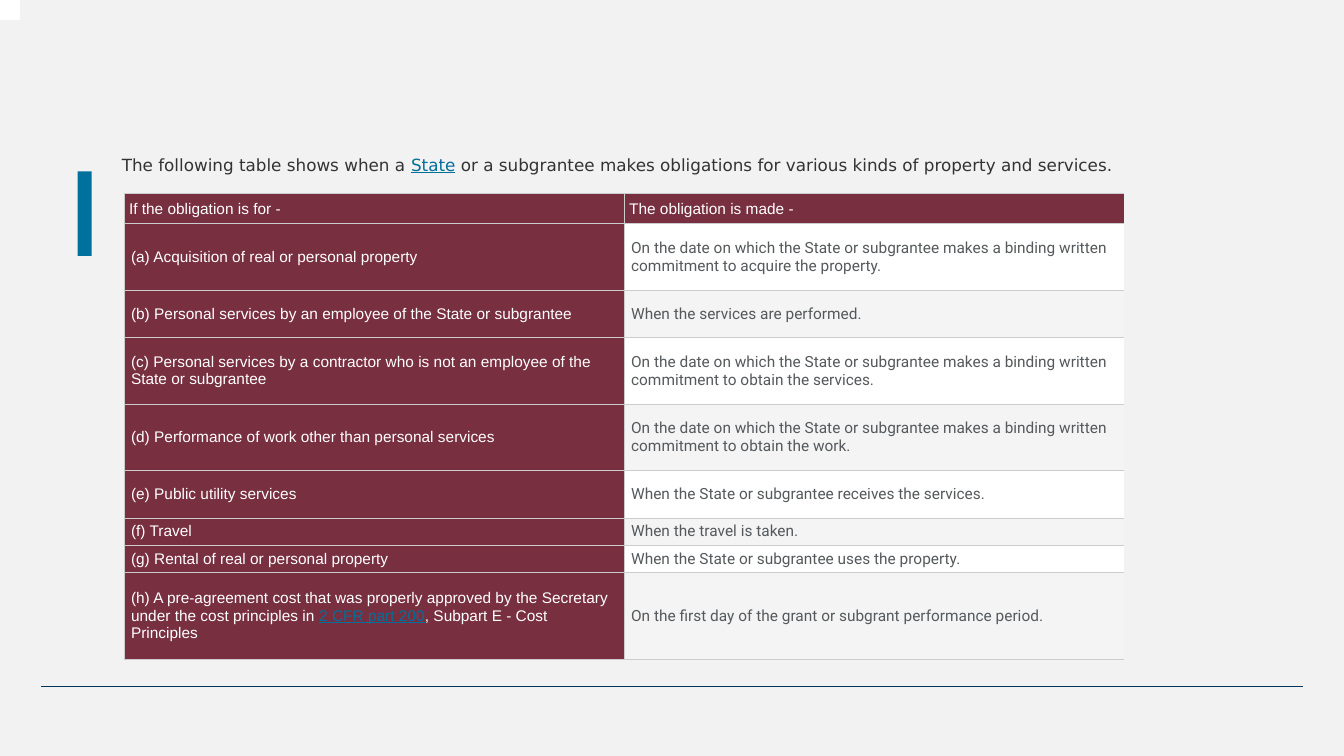
from dataclasses import dataclass

from lxml.etree import SubElement
from pptx import Presentation
from pptx.dml.color import RGBColor
from pptx.enum.shapes import MSO_CONNECTOR, MSO_SHAPE
from pptx.enum.text import MSO_ANCHOR
from pptx.oxml.ns import qn
from pptx.util import Inches, Pt


@dataclass(frozen=True)
class Theme:
    background: str = "F2F2F2"
    white: str = "FFFFFF"
    stripe: str = "F4F4F4"
    garnet: str = "782F40"
    accent: str = "00719C"
    link: str = "00709B"
    rule: str = "00365A"
    border: str = "CCCCCC"
    title_text: str = "333333"
    body_text: str = "55595C"
    title_font: str = "DejaVu Sans"
    label_font: str = "Arial"
    body_font: str = "Roboto"
    title_size: float = 12
    table_size: float = 11
    border_width: float = 0.75


HEADER = ("If the obligation is for -", "The obligation is made -")
OBLIGATIONS = [
    ("(a) Acquisition of real or personal property",
     "On the date on which the State or subgrantee makes a binding written "
     "commitment to acquire the property."),
    ("(b) Personal services by an employee of the State or subgrantee",
     "When the services are performed."),
    ("(c) Personal services by a contractor who is not an employee of the State or subgrantee",
     "On the date on which the State or subgrantee makes a binding written "
     "commitment to obtain the services."),
    ("(d) Performance of work other than personal services",
     "On the date on which the State or subgrantee makes a binding written "
     "commitment to obtain the work."),
    ("(e) Public utility services",
     "When the State or subgrantee receives the services."),
    ("(f) Travel", "When the travel is taken."),
    ("(g) Rental of real or personal property",
     "When the State or subgrantee uses the property."),
    (("(h) A pre-agreement cost that was properly approved by the Secretary "
      "under the cost principles in ", "2 CFR part 200", ", Subpart E - Cost Principles"),
     "On the first day of the grant or subgrant performance period."),
]
ROW_HEIGHTS = [0.3, 0.66, 0.47, 0.66, 0.66, 0.47, 0.27, 0.27, 0.86]
COLUMN_WIDTH = 4.96


class SlideBuilder:
    def __init__(self, slide, theme):
        self.slide = slide
        self.theme = theme
        self.paint(slide.background.fill, theme.background)

    def paint(self, fill, color):
        fill.solid()
        fill.fore_color.rgb = RGBColor.from_string(color)

    def add_text(self, paragraph, content, font, size, color):
        """Add a string, or a tuple whose every second part is styled as a link."""
        parts = (content,) if isinstance(content, str) else content
        for index, part in enumerate(parts):
            run = paragraph.add_run()
            run.text = part
            is_link = index % 2 == 1
            run.font.name = font
            run.font.size = Pt(size)
            run.font.underline = is_link
            run.font.color.rgb = RGBColor.from_string(self.theme.link if is_link else color)

    def rectangle(self, left, top, width, height, color):
        shape = self.slide.shapes.add_shape(
            MSO_SHAPE.RECTANGLE, Inches(left), Inches(top), Inches(width), Inches(height))
        shape.shadow.inherit = False
        shape.line.fill.background()
        self.paint(shape.fill, color)

    def horizontal_rule(self, left, right, top):
        connector = self.slide.shapes.add_connector(
            MSO_CONNECTOR.STRAIGHT, Inches(left), Inches(top), Inches(right), Inches(top))
        connector.line.color.rgb = RGBColor.from_string(self.theme.rule)
        connector.line.width = Pt(1)
        SubElement(connector._element.spPr, qn("a:effectLst"))

    def title(self, left, top, width, height, content):
        text_frame = self.slide.shapes.add_textbox(
            Inches(left), Inches(top), Inches(width), Inches(height)).text_frame
        text_frame.word_wrap = True
        text_frame.vertical_anchor = MSO_ANCHOR.MIDDLE
        text_frame.margin_bottom = Inches(0.27)
        paragraph = text_frame.paragraphs[0]
        paragraph.line_spacing = 0.9
        self.add_text(paragraph, content, self.theme.title_font,
                      self.theme.title_size, self.theme.title_text)

    def borders(self, cell, open_right):
        properties = cell._tc.get_or_add_tcPr()
        for side in "LRTB":
            line = SubElement(properties, qn(f"a:ln{side}"),
                              w=str(Pt(self.theme.border_width)))
            if side == "R" and open_right:
                SubElement(line, qn("a:noFill"))
            else:
                fill = SubElement(line, qn("a:solidFill"))
                SubElement(fill, qn("a:srgbClr"), val=self.theme.border)

    def cell(self, cell, content, row, column):
        theme = self.theme
        is_body = row > 0 and column > 0
        self.borders(cell, open_right=column == 1)
        stripe = theme.white if row % 2 else theme.stripe
        self.paint(cell.fill, stripe if is_body else theme.garnet)
        cell.vertical_anchor = MSO_ANCHOR.MIDDLE
        cell.margin_left = cell.margin_right = Inches(0.07 if row else 0.05)
        cell.margin_top = cell.margin_bottom = Inches(0.03 if row else 0.05)
        self.add_text(cell.text_frame.paragraphs[0], content,
                      theme.body_font if is_body else theme.label_font, theme.table_size,
                      theme.body_text if is_body else theme.white)

    def table(self, left, top, rows):
        table = self.slide.shapes.add_table(
            len(rows), 2, Inches(left), Inches(top),
            Inches(2 * COLUMN_WIDTH), Inches(sum(ROW_HEIGHTS))).table
        # The header row is plain weight, so the style's bold header is off.
        table.first_row = False
        for table_column in table.columns:
            table_column.width = Inches(COLUMN_WIDTH)
        for row, contents in enumerate(rows):
            table.rows[row].height = Inches(ROW_HEIGHTS[row])
            for column, content in enumerate(contents):
                self.cell(table.cell(row, column), content, row, column)


def main():
    presentation = Presentation()
    presentation.slide_width = Inches(13.33)
    presentation.slide_height = Inches(7.5)
    slide = presentation.slides.add_slide(presentation.slide_layouts[6])
    theme = Theme()
    builder = SlideBuilder(slide, theme)
    builder.horizontal_rule(0.41, 12.92, 6.81)
    builder.rectangle(0.77, 1.7, 0.14, 0.84, theme.accent)
    builder.title(1.11, 1.44, 11.3, 0.64, (
        "The following table shows when a ", "State",
        " or a subgrantee makes obligations for various kinds of property and services."))
    builder.table(1.23, 1.92, [HEADER, *OBLIGATIONS])
    builder.rectangle(0, 0, 0.2, 0.2, theme.white)
    presentation.save("out.pptx")


if __name__ == "__main__":
    main()
